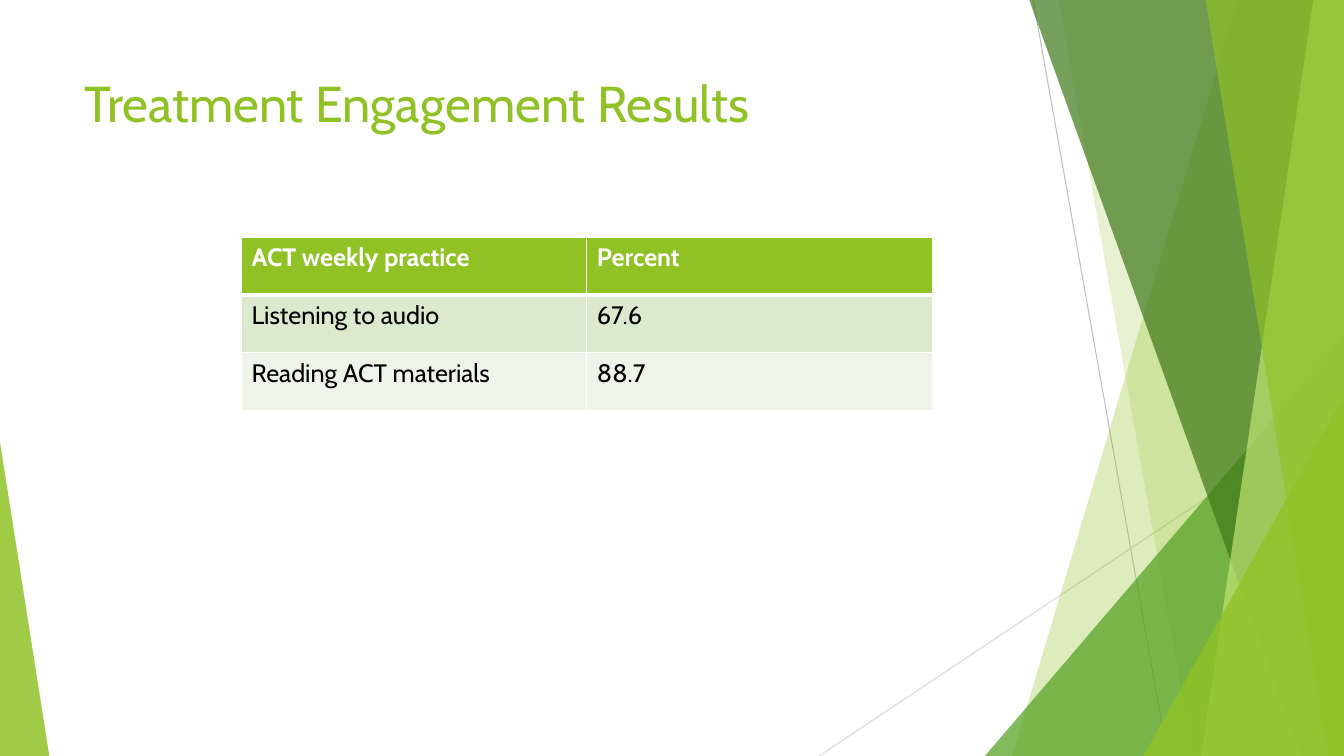
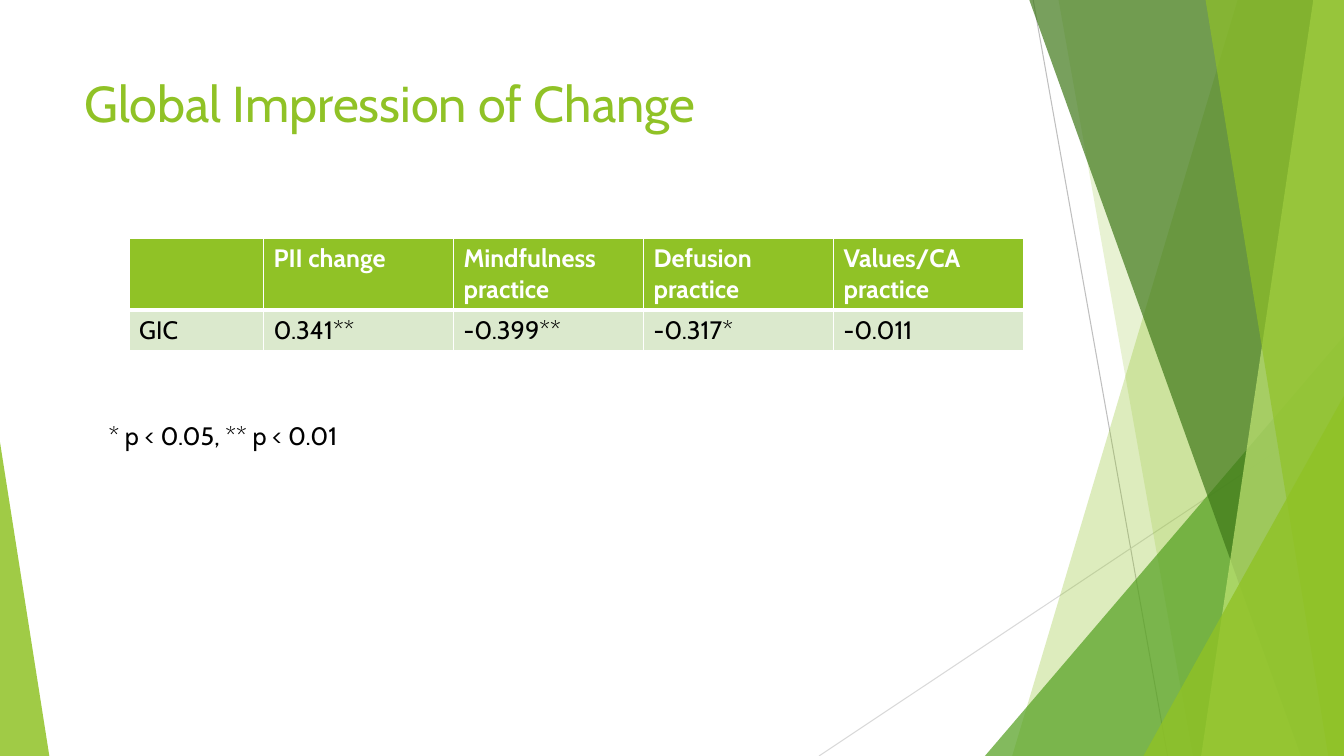
from dataclasses import dataclass

from lxml.etree import SubElement
from pptx import Presentation
from pptx.dml.color import RGBColor
from pptx.enum.shapes import MSO_CONNECTOR, MSO_SHAPE
from pptx.enum.text import MSO_ANCHOR, MSO_AUTO_SIZE, PP_ALIGN
from pptx.oxml.ns import qn
from pptx.shapes.autoshape import Shape
from pptx.shapes.group import GroupShape
from pptx.slide import Slide, SlideLayout
from pptx.table import _Cell
from pptx.text.text import TextFrame
from pptx.util import Emu, Pt

PX = 9525  # EMU in one px
SLIDE_WIDTH, SLIDE_HEIGHT = 1280, 720
TITLE_ONLY_LAYOUT = 5


@dataclass(frozen=True)
class Theme:
    font: str = "Cabin"
    title_size: int = 36
    body_size: int = 18
    lime: str = "90C226"
    pale_lime: str = "C0E474"
    green: str = "54A021"
    forest: str = "3F7819"
    dark_rule: str = "BFBFBF"
    light_rule: str = "D9D9D9"
    white: str = "FFFFFF"
    black: str = "000000"
    row_bands: tuple[str, str] = ("DBE9CD", "EEF4E8")
    rule_width: float = 0.75
    cell_border: int = 1
    header_border: int = 3


THEME = Theme()


@dataclass(frozen=True)
class Box:
    left: int
    top: int
    width: int
    height: int

    def emu(self) -> tuple[Emu, Emu, Emu, Emu]:
        return px(self.left), px(self.top), px(self.width), px(self.height)


@dataclass(frozen=True)
class Rule:
    start: tuple[int, int]
    end: tuple[int, int]
    color: str


@dataclass(frozen=True)
class Blade:
    """A band with a slanting left edge that fills out to the right of the slide."""
    top_x: int
    bottom_x: int
    color: str
    opacity: int


@dataclass(frozen=True)
class Wedge:
    """A right-angled triangle; apex is 0 for its left side, 1 for its right."""
    box: Box
    apex: float
    color: str
    opacity: int


@dataclass(frozen=True)
class ResultTable:
    left: int
    top: int
    column_widths: tuple[int, ...]
    row_heights: tuple[int, ...]
    rows: tuple[tuple[str, ...], ...]


@dataclass(frozen=True)
class ResultSlide:
    title: str
    table: ResultTable
    footnote: str = ""


TITLE_BOX = Box(71, 64, 902, 138)
FOOTNOTE_BOX = Box(94, 396, 297, 38)

BACKDROP: tuple[Rule | Blade | Wedge, ...] = (
    Rule((984, 0), (1112, SLIDE_HEIGHT), THEME.dark_rule),
    Rule((SLIDE_WIDTH, 387), (780, SLIDE_HEIGHT), THEME.light_rule),
    Blade(1179, 964, THEME.lime, 30),
    Blade(1008, 1136, THEME.lime, 20),
    Wedge(Box(938, 320, 342, 400), 1, THEME.green, 72),
    Blade(980, 1239, THEME.forest, 70),
    Blade(1251, 1144, THEME.pale_lime, 70),
    Blade(1148, 1265, THEME.lime, 65),
    Wedge(Box(1089, 377, 191, 343), 1, THEME.lime, 80),
    Wedge(Box(0, 421, 47, 299), 0, THEME.lime, 85),
)

RESULTS = (
    ResultSlide(
        "Treatment Engagement Results",
        ResultTable(230, 226, (329,) * 2, (55,) * 3, (
            ("ACT weekly practice", "Percent"),
            ("Listening to audio", "67.6"),
            ("Reading ACT materials", "88.7"),
        )),
    ),
    ResultSlide(
        "Global Impression of Change",
        ResultTable(123, 227, (128,) + (181,) * 4, (67, 39), (
            ("", "PII change", "Mindfulness practice", "Defusion practice",
             "Values/CA practice"),
            ("GIC", "0.341**", "-0.399**", "-0.317*", "-0.011"),
        )),
        footnote="* p < 0.05, ** p < 0.01",
    ),
)


def px(length: int) -> Emu:
    return Emu(length * PX)


def write(frame: TextFrame, text: str, *, size: int = THEME.body_size,
          color: str = THEME.black, bold: bool = False) -> None:
    frame.word_wrap = True
    paragraph = frame.paragraphs[0]
    paragraph.alignment = PP_ALIGN.LEFT
    run = paragraph.add_run()
    run.text = text
    run.font.name = THEME.font
    run.font.size = Pt(size)
    run.font.bold = bold
    run.font.color.rgb = RGBColor.from_string(color)


def paint(shape: Shape, color: str, opacity: int) -> None:
    """Give the shape a see-through fill with no outline or shadow."""
    shape.shadow.inherit = False
    shape.line.fill.background()
    shape.fill.solid()
    shape.fill.fore_color.rgb = RGBColor.from_string(color)
    color_element = shape.element.spPr.find(qn("a:solidFill"))[0]
    SubElement(color_element, qn("a:alpha"), val=str(opacity * 1000))


def draw_rule(group: GroupShape, rule: Rule) -> None:
    ends = [px(value) for value in rule.start + rule.end]
    connector = group.shapes.add_connector(MSO_CONNECTOR.STRAIGHT, *ends)
    connector.line.width = Pt(THEME.rule_width)
    connector.line.color.rgb = RGBColor.from_string(rule.color)
    SubElement(connector.element.spPr, qn("a:effectLst"))


def draw_blade(group: GroupShape, blade: Blade) -> None:
    outline = group.shapes.build_freeform(blade.top_x, -1, scale=PX)
    outline.add_line_segments((
        (SLIDE_WIDTH, -1),
        (SLIDE_WIDTH, SLIDE_HEIGHT),
        (blade.bottom_x, SLIDE_HEIGHT),
    ), close=True)
    paint(outline.convert_to_shape(), blade.color, blade.opacity)


def draw_wedge(group: GroupShape, wedge: Wedge) -> None:
    triangle = group.shapes.add_shape(MSO_SHAPE.ISOSCELES_TRIANGLE, *wedge.box.emu())
    triangle.adjustments[0] = wedge.apex
    paint(triangle, wedge.color, wedge.opacity)


def add_backdrop(layout: SlideLayout, slide: Slide) -> None:
    """Draw the backdrop on the slide, then move it to the layout for all to share."""
    group = slide.shapes.add_group_shape()
    for part in BACKDROP:
        if isinstance(part, Rule):
            draw_rule(group, part)
        elif isinstance(part, Blade):
            draw_blade(group, part)
        else:
            draw_wedge(group, part)
    layout.shapes.element.append(group.element)


def add_title(slide: Slide, text: str) -> None:
    title = slide.shapes.title
    title.left, title.top, title.width, title.height = TITLE_BOX.emu()
    title.text_frame.vertical_anchor = MSO_ANCHOR.TOP
    title.text_frame.auto_size = MSO_AUTO_SIZE.NONE
    write(title.text_frame, text, size=THEME.title_size, color=THEME.lime)


def set_borders(cell: _Cell, bottom: int, top: int) -> None:
    properties = cell._tc.get_or_add_tcPr()
    side = THEME.cell_border
    for tag, width in (("lnL", side), ("lnR", side), ("lnT", top), ("lnB", bottom)):
        line = SubElement(properties, qn(f"a:{tag}"), w=str(Pt(width)))
        fill = SubElement(line, qn("a:solidFill"))
        SubElement(fill, qn("a:srgbClr"), val=THEME.white)


def format_cell(cell: _Cell, text: str, row: int) -> None:
    header = row == 0
    set_borders(
        cell,
        bottom=THEME.header_border if header else THEME.cell_border,
        top=THEME.header_border if row == 1 else THEME.cell_border,
    )
    band = THEME.row_bands[(row - 1) % 2]
    cell.fill.solid()
    cell.fill.fore_color.rgb = RGBColor.from_string(THEME.lime if header else band)
    if text:
        write(cell.text_frame, text, bold=header,
              color=THEME.white if header else THEME.black)


def add_results(slide: Slide, results: ResultTable) -> None:
    box = Box(results.left, results.top,
              sum(results.column_widths), sum(results.row_heights))
    table = slide.shapes.add_table(
        len(results.rows), len(results.column_widths), *box.emu()).table
    for column, width in zip(table.columns, results.column_widths):
        column.width = px(width)
    for row, height in zip(table.rows, results.row_heights):
        row.height = px(height)
    for row_index, texts in enumerate(results.rows):
        for column_index, text in enumerate(texts):
            format_cell(table.cell(row_index, column_index), text, row_index)


def add_footnote(slide: Slide, text: str) -> None:
    footnote = slide.shapes.add_textbox(*FOOTNOTE_BOX.emu())
    footnote.text_frame.auto_size = MSO_AUTO_SIZE.SHAPE_TO_FIT_TEXT
    write(footnote.text_frame, text)


def main() -> None:
    deck = Presentation()
    deck.slide_width, deck.slide_height = px(SLIDE_WIDTH), px(SLIDE_HEIGHT)
    layout = deck.slide_layouts[TITLE_ONLY_LAYOUT]
    for index, content in enumerate(RESULTS):
        slide = deck.slides.add_slide(layout)
        if index == 0:
            add_backdrop(layout, slide)
        add_title(slide, content.title)
        add_results(slide, content.table)
        if content.footnote:
            add_footnote(slide, content.footnote)
    deck.save("out.pptx")


if __name__ == "__main__":
    main()
